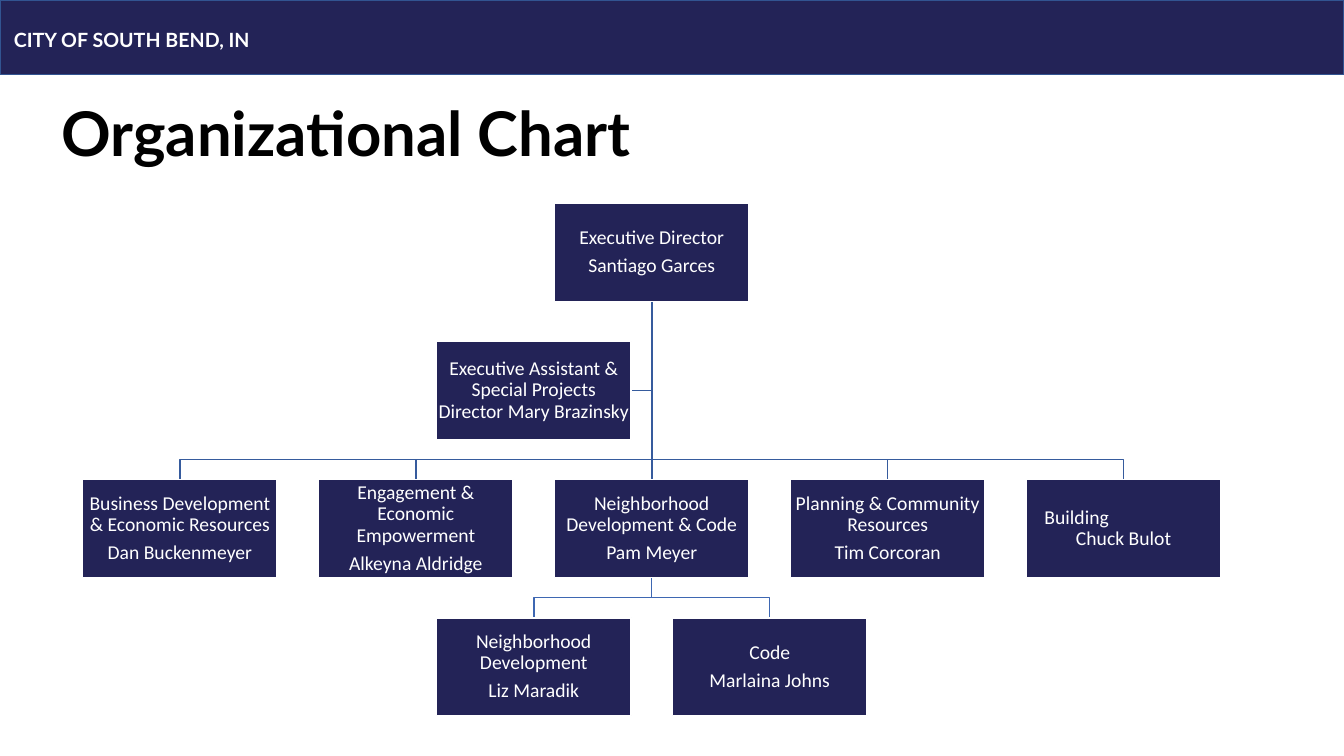
from lxml.etree import SubElement
from pptx import Presentation
from pptx.dml.color import RGBColor
from pptx.enum.shapes import MSO_CONNECTOR, MSO_SHAPE
from pptx.enum.text import MSO_ANCHOR, PP_ALIGN
from pptx.oxml.ns import qn
from pptx.util import Inches, Pt

# Content: key -> (column, row, paragraphs)
BANNER = "CITY OF SOUTH BEND, IN"
TITLE = "Organizational Chart"
POSITIONS = {
    "director": (2, 0, ["Executive Director", "Santiago Garces"]),
    "business": (0, 2, ["Business Development & Economic Resources", "Dan Buckenmeyer"]),
    "engagement": (1, 2, ["Engagement & Economic Empowerment", "Alkeyna Aldridge"]),
    "neighborhood": (2, 2, ["Neighborhood Development & Code", "Pam Meyer"]),
    "development": (1.5, 3, ["Neighborhood Development", "Liz Maradik"]),
    "code": (2.5, 3, ["Code", "Marlaina Johns"]),
    "planning": (3, 2, ["Planning & Community Resources", "Tim Corcoran"]),
    "building": (4, 2, ["Building", "Chuck Bulot"]),
    "assistant": (1.5, 1, ["Executive Assistant & Special Projects Director Mary Brazinsky"]),
}
REPORTS = [
    ("director", "building"), ("director", "planning"),
    ("neighborhood", "code"), ("neighborhood", "development"),
    ("director", "engagement"), ("director", "business"),
]

NAVY = RGBColor(0x23, 0x23, 0x57)
BANNER_EDGE = RGBColor(0x32, 0x54, 0x91)
WHITE = RGBColor(0xFF, 0xFF, 0xFF)
BLACK = RGBColor(0x00, 0x00, 0x00)
LINK_COLORS = {"director": RGBColor(0x36, 0x5B, 0x9D), "neighborhood": RGBColor(0x3E, 0x67, 0xB2)}

# Grid, in inches
LEFT, TOP = 0.82, 2.02
COLUMN_STEP, ROW_STEP = 2.34, 1.37
BOX_WIDTH, BOX_HEIGHT = 1.93, 0.97
BUS_RISE = 0.2

deck = Presentation()
deck.slide_width, deck.slide_height = Inches(13.33), Inches(7.5)
page = deck.slides.add_slide(deck.slide_layouts[6])


def corner(key):
    column, row, _ = POSITIONS[key]
    return LEFT + column * COLUMN_STEP, TOP + row * ROW_STEP


def top_middle(key):
    x, y = corner(key)
    return x + BOX_WIDTH / 2, y


def bottom_middle(key):
    x, y = top_middle(key)
    return x, y + BOX_HEIGHT


def style_font(para, name, size, color, bold=False):
    font = para.font
    font.name, font.size, font.bold = name, Pt(size), bold
    font.color.rgb = color


def add_rectangle(x, y, width, height, edge):
    box = page.shapes.add_shape(
        MSO_SHAPE.RECTANGLE, Inches(x), Inches(y), Inches(width), Inches(height))
    box.shadow.inherit = False
    box.fill.solid()
    box.fill.fore_color.rgb = NAVY
    box.line.color.rgb = edge
    box.line.width = Pt(1)
    return box


def add_heading(text, x, y, width, height, size, color):
    box = page.shapes.add_textbox(Inches(x), Inches(y), Inches(width), Inches(height))
    frame = box.text_frame
    frame.word_wrap = True
    frame.vertical_anchor = MSO_ANCHOR.MIDDLE
    frame.text = text
    style_font(frame.paragraphs[0], "Lato", size, color, True)
    return frame.paragraphs[0]


def add_path(points, color):
    start, *rest = [(Inches(x), Inches(y)) for x, y in points]
    builder = page.shapes.build_freeform(*start)
    builder.add_line_segments(rest, close=False)
    link = builder.convert_to_shape()
    link.shadow.inherit = False
    link.fill.background()
    link.line.color.rgb = color
    link.line.width = Pt(1)


def add_position(key):
    box = add_rectangle(*corner(key), BOX_WIDTH, BOX_HEIGHT, WHITE)
    frame = box.text_frame
    frame.word_wrap = True
    frame.vertical_anchor = MSO_ANCHOR.MIDDLE
    frame.margin_left = frame.margin_right = Inches(0.01)
    frame.margin_top = frame.margin_bottom = Inches(0.01)
    frame.text = "\n".join(POSITIONS[key][2])
    for para in frame.paragraphs:
        para.alignment = PP_ALIGN.CENTER
        para.line_spacing = 0.9
        para.space_after = Pt(5)
        style_font(para, "Calibri", 14, WHITE)
    return box


# Banner and title
add_rectangle(0, 0, 13.33, 0.74, BANNER_EDGE)
add_heading(BANNER, 0.04, 0.19, 3, 0.4, 14, WHITE)
add_heading(TITLE, 0.51, 0.8, 11.46, 1.1, 44, BLACK).line_spacing = 0.9

# Reporting lines, behind the boxes
trunk_x, trunk_y = bottom_middle("director")
assistant_x, assistant_y = corner("assistant")
assistant_middle = assistant_y + BOX_HEIGHT / 2
add_path([(trunk_x, trunk_y), (trunk_x, assistant_middle),
          (assistant_x + BOX_WIDTH, assistant_middle)], LINK_COLORS["director"])
for manager, report in REPORTS:
    start_x, start_y = bottom_middle(manager)
    end_x, end_y = top_middle(report)
    bus_y = end_y - BUS_RISE
    add_path([(start_x, start_y), (start_x, bus_y), (end_x, bus_y), (end_x, end_y)],
             LINK_COLORS[manager])

trunk_end = top_middle("neighborhood")
trunk = page.shapes.add_connector(
    MSO_CONNECTOR.STRAIGHT, Inches(trunk_x), Inches(trunk_y),
    Inches(trunk_end[0]), Inches(trunk_end[1]))
trunk.line.color.rgb = LINK_COLORS["director"]
trunk.line.width = Pt(1)
SubElement(trunk.element.spPr, qn("a:effectLst"))

# Position boxes
boxes = {key: add_position(key) for key in POSITIONS}
trunk.begin_connect(boxes["director"], 2)
trunk.end_connect(boxes["neighborhood"], 0)

# The Building label sits left, close above its name
building_label = boxes["building"].text_frame.paragraphs[0]
building_label.alignment = PP_ALIGN.LEFT
building_label.space_after = Pt(0)
building_label._p.get_or_add_pPr().set("marL", str(Inches(0.17)))

deck.save("out.pptx")
